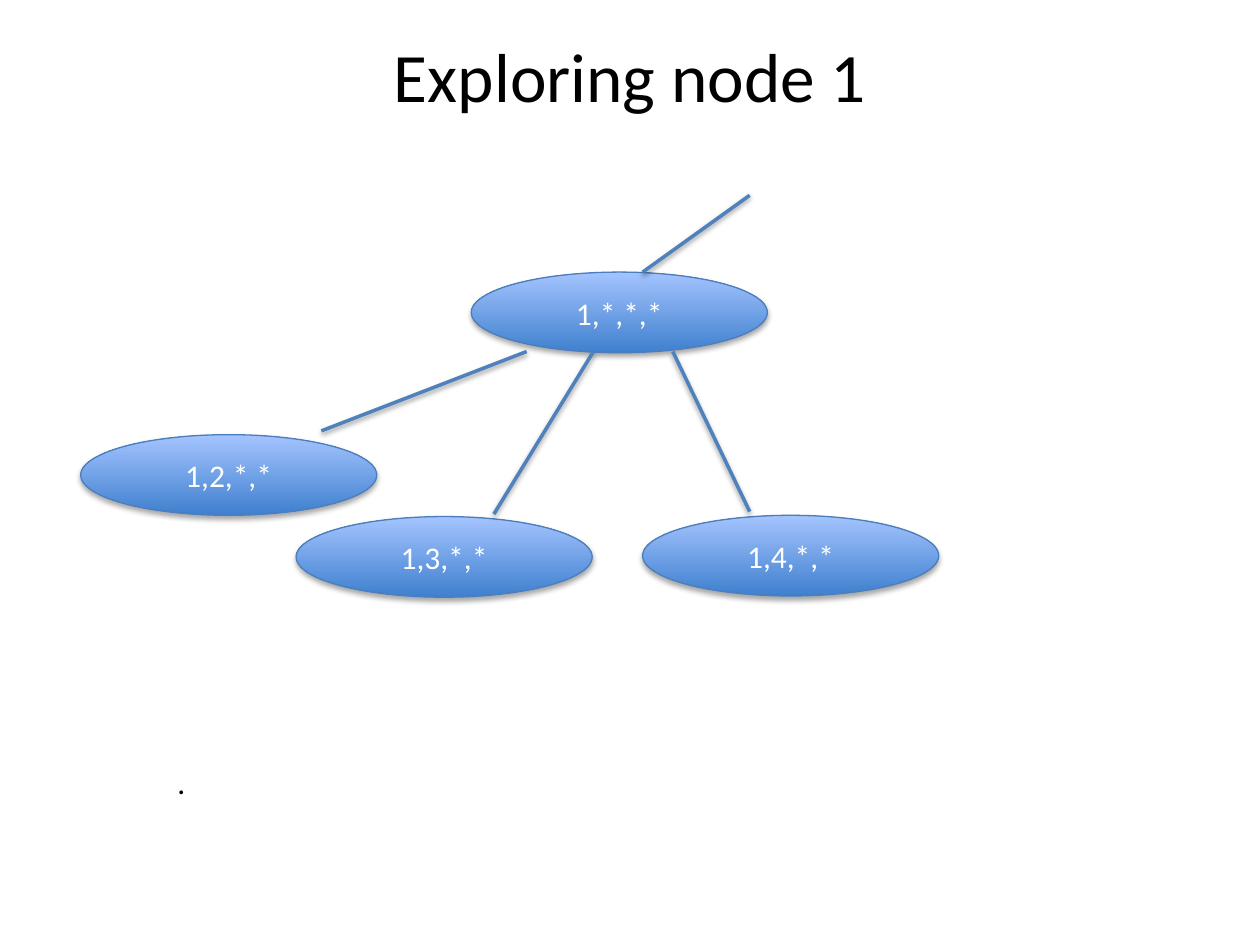
import pptx
import pptx.util
import pptx.dml.color
import pptx.enum.shapes
import pptx.enum.text
import pptx.oxml

Inches = pptx.util.Inches
Pt = pptx.util.Pt
RGB = pptx.dml.color.RGBColor.from_string

COLORS = {
    "text": "000000",
    "node_text": "FFFFFF",
    "node_bottom": "3F80CE",
    "node_top": "A4C4FF",
    "node_line": "4B7EBC",
    "edge": "4F81BD",
    "shadow": "000000",
}
NODE_WIDTH, NODE_HEIGHT = 2.35, 0.64


def write_text(shape, text, size, color, alignment):
    frame = shape.text_frame
    frame.text = text
    paragraph = frame.paragraphs[0]
    paragraph.alignment = alignment
    font_format = {"name": "Calibri", "size": Pt(size)}
    for name, value in font_format.items():
        setattr(paragraph.runs[0].font, name, value)
    paragraph.runs[0].font.color.rgb = RGB(COLORS[color])


def add_shadow(shape, distance, opacity):
    namespace = "http://schemas.openxmlformats.org/drawingml/2006/main"
    shape._element.spPr.append(pptx.oxml.parse_xml(
        f'<a:effectLst xmlns:a="{namespace}">'
        f'<a:outerShdw blurRad="{Pt(3.1)}" dist="{Pt(distance)}" dir="5400000" rotWithShape="0">'
        f'<a:srgbClr val="{COLORS["shadow"]}"><a:alpha val="{opacity * 1000}"/></a:srgbClr>'
        '</a:outerShdw></a:effectLst>'))


presentation = pptx.Presentation()
presentation.slide_width = Inches(10)
presentation.slide_height = Inches(7.5)
slide = presentation.slides.add_slide(presentation.slide_layouts[5])

title = slide.shapes.title
title_place = {"left": 0.5, "top": 0.3, "width": 9, "height": 1.25}
for name, value in title_place.items():
    setattr(title, name, Inches(value))
title_format = {
    "vertical_anchor": pptx.enum.text.MSO_ANCHOR.MIDDLE,
    "margin_bottom": Inches(0.72),
    "word_wrap": True,
    "auto_size": pptx.enum.text.MSO_AUTO_SIZE.NONE,
}
for name, value in title_format.items():
    setattr(title.text_frame, name, value)
write_text(title, "Exploring node 1", 39.6, "text", pptx.enum.text.PP_ALIGN.CENTER)

nodes = [
    ("1,*,*,*", 3.74, 2.16),
    ("1,4,*,*", 5.1, 4.09),
    ("1,3,*,*", 2.35, 4.1),
    ("1,2,*,*", 0.64, 3.45),
]
for label, left, top in nodes:
    node = slide.shapes.add_shape(
        pptx.enum.shapes.MSO_SHAPE.OVAL,
        Inches(left), Inches(top), Inches(NODE_WIDTH), Inches(NODE_HEIGHT))
    node.fill.gradient()
    node.fill.gradient_angle = 90
    for stop, color in zip(node.fill.gradient_stops, ("node_bottom", "node_top")):
        stop.color.rgb = RGB(COLORS[color])
    node.line.color.rgb = RGB(COLORS["node_line"])
    node.line.width = Pt(0.75)
    add_shadow(node, 1.8, 35)
    node.text_frame.vertical_anchor = pptx.enum.text.MSO_ANCHOR.MIDDLE
    write_text(node, label, 18, "node_text", pptx.enum.text.PP_ALIGN.CENTER)

edges = [
    (4.18, 2.79, 2.55, 3.42),
    (4.71, 2.79, 3.92, 4.08),
    (5.34, 2.79, 5.95, 4.06),
    (5.1, 2.16, 5.95, 1.55),
]
for ends in edges:
    edge = slide.shapes.add_connector(
        pptx.enum.shapes.MSO_CONNECTOR.STRAIGHT, *map(Inches, ends))
    edge.line.color.rgb = RGB(COLORS["edge"])
    edge.line.width = Pt(2)
    add_shadow(edge, 1.6, 38)

dot = slide.shapes.add_textbox(Inches(1.31), Inches(6.01), Inches(0.27), Inches(0.4))
dot.text_frame.word_wrap = False
dot.text_frame.auto_size = pptx.enum.text.MSO_AUTO_SIZE.SHAPE_TO_FIT_TEXT
write_text(dot, ".", 18, "text", pptx.enum.text.PP_ALIGN.LEFT)

presentation.save("out.pptx")
